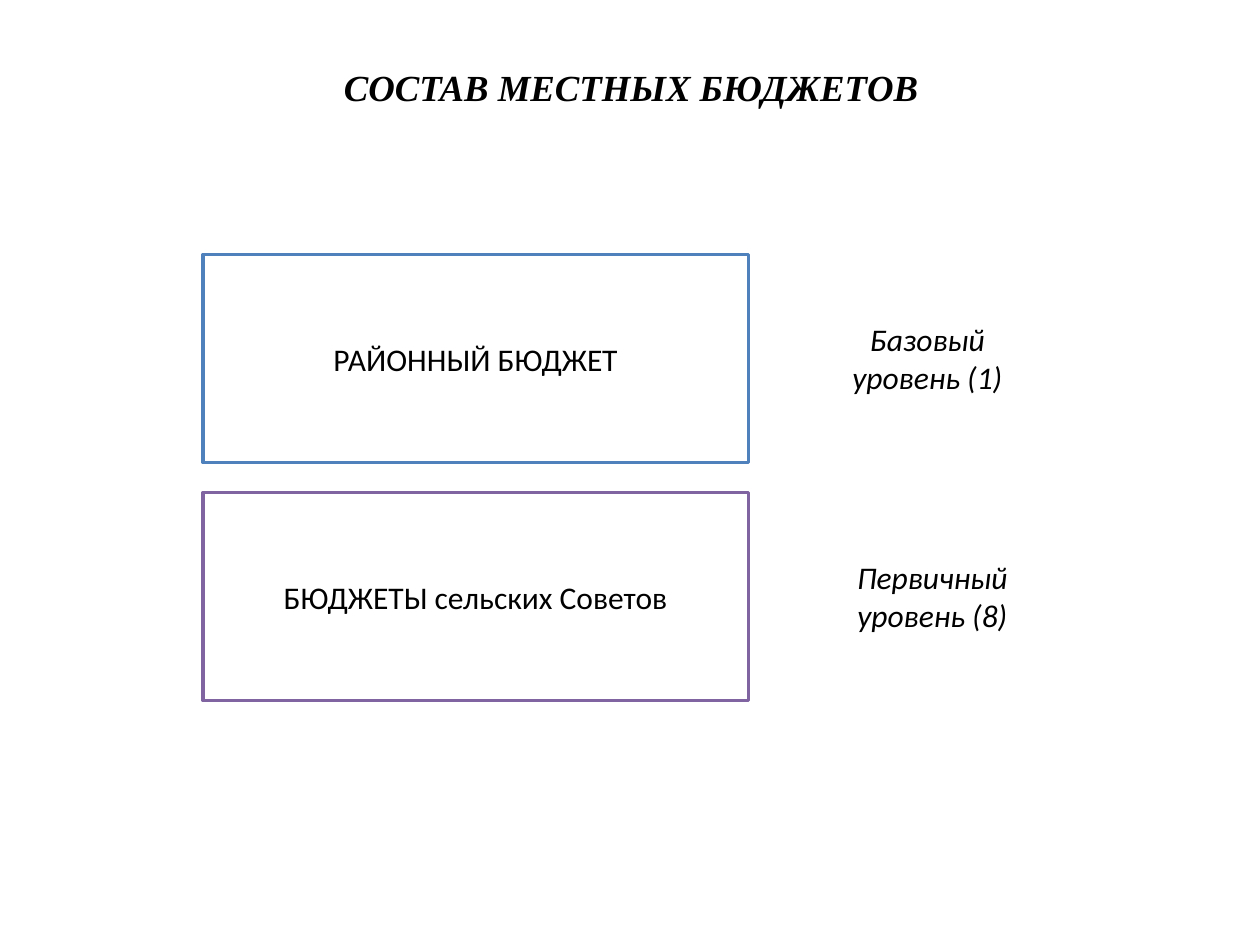
"""Builds a slide on the two levels of local budgets."""
from dataclasses import dataclass

from pptx import Presentation, util as u
from pptx.dml.color import RGBColor
from pptx.enum import shapes, text


@dataclass(frozen=True)
class Theme:
    ink: str = "000000"
    blue: str = "4F81BD"
    violet: str = "8064A2"
    head: str = "Times New Roman"
    body: str = "Calibri"
    big: int = 21
    mid: int = 18


THEME = Theme()


def write(shape, lines, font=THEME.body, size=THEME.mid, bold=False,
          slant=False, anchor=text.MSO_ANCHOR.MIDDLE, wrap=True):
    frame = shape.text_frame
    frame.word_wrap = wrap
    frame.vertical_anchor = anchor
    frame.text = "\n".join(lines)
    for para in frame.paragraphs:
        para.alignment = text.PP_ALIGN.CENTER
        face = para.runs[0].font
        face.name, face.size = font, u.Pt(size)
        face.bold, face.italic = bold, slant
        face.color.rgb = RGBColor.from_string(THEME.ink)


def title(slide, words):
    head = slide.shapes.title
    head.left, head.top = u.Inches(0.51), u.Inches(0.44)
    head.width, head.height = u.Inches(9), u.Inches(0.77)
    write(head, [words], font=THEME.head, size=THEME.big, bold=True,
          slant=True, anchor=text.MSO_ANCHOR.TOP)
    head.text_frame.margin_top = u.Inches(0.07)


def panel(slide, top, words, color):
    box = slide.shapes.add_shape(
        shapes.MSO_SHAPE.RECTANGLE, u.Inches(1.61), u.Inches(top),
        u.Inches(4.33), u.Inches(1.65))
    box.shadow.inherit = False
    box.fill.background()
    box.line.color.rgb = RGBColor.from_string(color)
    box.line.width = u.Pt(2)
    write(box, [words])


def label(slide, left, top, width, lines):
    box = slide.shapes.add_textbox(
        u.Inches(left), u.Inches(top), u.Inches(width), u.Inches(0.71))
    write(box, lines, slant=True, anchor=text.MSO_ANCHOR.TOP, wrap=False)
    box.text_frame.auto_size = text.MSO_AUTO_SIZE.SHAPE_TO_FIT_TEXT


def main():
    deck = Presentation()
    deck.slide_width, deck.slide_height = u.Inches(10), u.Inches(7.5)
    slide = deck.slides.add_slide(deck.slide_layouts[5])
    title(slide, "СОСТАВ МЕСТНЫХ БЮДЖЕТОВ")
    levels = [
        ("РАЙОННЫЙ БЮДЖЕТ", THEME.blue,
         6.65, 1.42, ["Базовый", "уровень (1)"]),
        ("БЮДЖЕТЫ сельских Советов", THEME.violet,
         6.68, 1.44, ["Первичный", "уровень (8)"]),
    ]
    for row, (name, color, left, width, lines) in enumerate(levels):
        top = 2.02 + 1.89 * row
        panel(slide, top, name, color)
        label(slide, left, top + 0.47, width, lines)
    deck.save("out.pptx")


if __name__ == "__main__":
    main()
